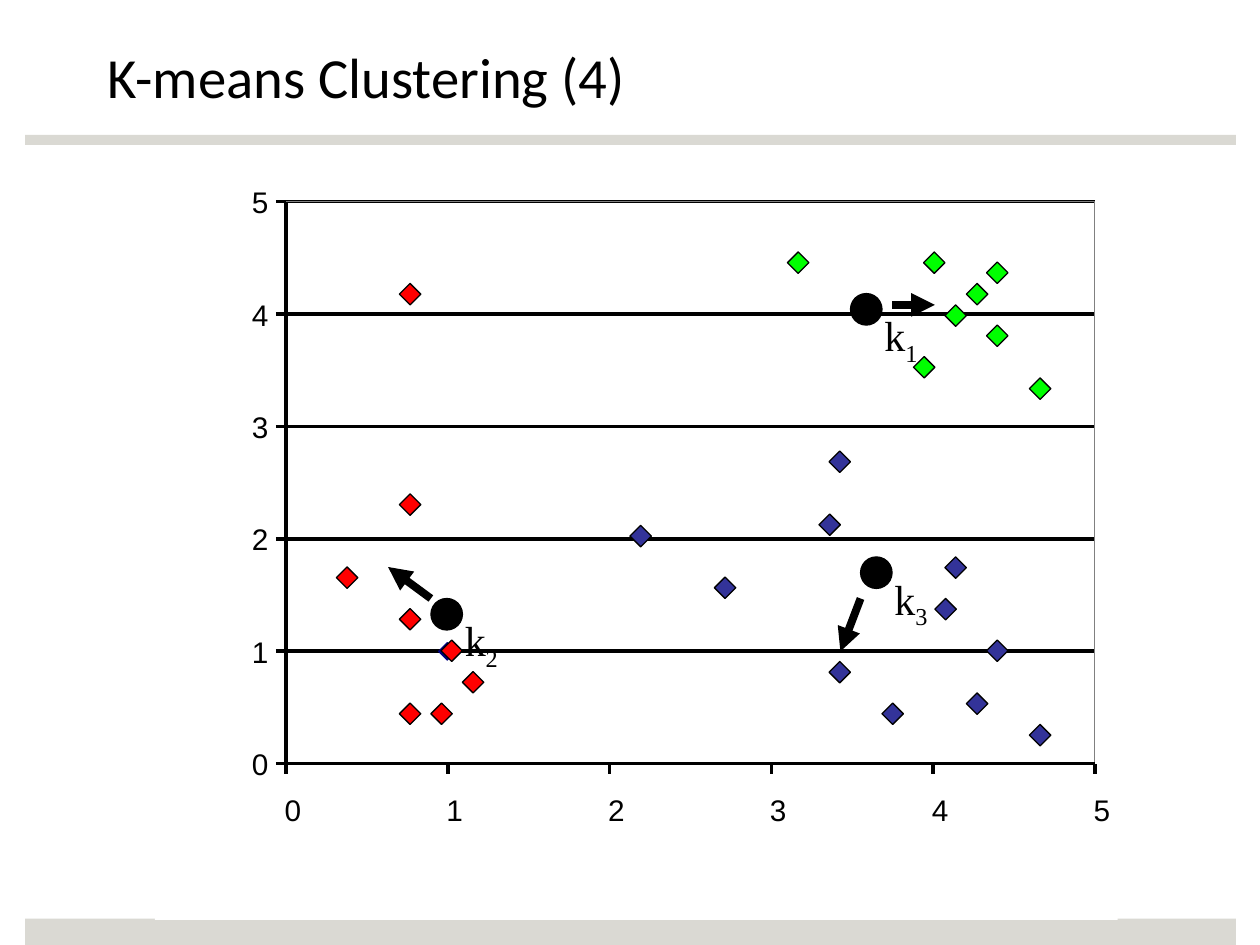
from dataclasses import dataclass

from lxml import etree
from pptx import Presentation, util as u
from pptx.dml.color import RGBColor
from pptx.enum import shapes as s, text as t
from pptx.oxml.ns import qn


@dataclass(frozen=True)
class Theme:
    black: str = "000000"
    white: str = "FFFFFF"
    bar: str = "DAD9D3"
    frame: str = "808080"
    navy: str = "000080"
    red: str = "FF0000"
    green: str = "00FF00"
    blue: str = "333399"
    title: float = 32.4
    tick: int = 17
    mark: int = 24


THEME = Theme()

# Plot area: axes run from 0 to 5
LEFT, TOP, WIDTH, HEIGHT = 2.27, 1.6, 6.42, 4.46
BASE, RIGHT, COUNT = TOP + HEIGHT, LEFT + WIDTH, 5
TICK = 0.08
POINT, DOT = 0.17, 0.25

# Upper left corners of the data points, by cluster
POINTS = {
    THEME.red: [(3.5, 5.08), (3.67, 5.33), (3.42, 5.58), (3.17, 4.83),
                (3.17, 2.25), (3.17, 3.92), (3.17, 5.58), (2.67, 4.5)],
    THEME.green: [(7.33, 2), (7.83, 2.08), (7.67, 2.25), (7.5, 2.42),
                  (7.83, 2.58), (8.17, 3), (6.25, 2), (7.25, 2.83)],
    THEME.blue: [(5, 4.17), (6.58, 3.58), (6.58, 5.25), (7, 5.58),
                 (7.42, 4.75), (6.5, 4.08), (5.67, 4.58), (7.83, 5.08),
                 (7.67, 5.5), (7.5, 4.42), (8.17, 5.75)],
}
# Centroids, and the moves they make
MEANS = {"1": (6.75, 2.33), "2": (3.42, 4.75), "3": (6.83, 4.42)}
MOVES = [(3.42, 4.75, 3.08, 4.5), (6.83, 4.75, 6.67, 5.17),
         (7.08, 2.42, 7.42, 2.42)]


def inches(*sizes):
    return [u.Inches(size) for size in sizes]


def add_form(parent, kind, box, fill=None, line=None, width=0.75):
    """Add a preset shape with an optional fill and outline."""
    form = parent.add_shape(kind, *inches(*box))
    form.shadow.inherit = False
    if fill:
        form.fill.solid()
        form.fill.fore_color.rgb = RGBColor.from_string(fill)
    else:
        form.fill.background()
    if line:
        form.line.color.rgb = RGBColor.from_string(line)
        form.line.width = u.Pt(width)
    else:
        form.line.fill.background()
    return form


def add_line(parent, ends, width=0, arrow=False):
    """Add a straight line, with an arrowhead at its end if asked."""
    line = parent.add_connector(s.MSO_CONNECTOR.STRAIGHT, *inches(*ends))
    line.line.color.rgb = RGBColor.from_string(THEME.black)
    line.line.width = u.Pt(width)
    props = line._element.spPr
    if arrow:
        etree.SubElement(props.find(qn("a:ln")), qn("a:tailEnd"), type="triangle")
    etree.SubElement(props, qn("a:effectLst"))


def style(run, size, face):
    run.font.size = u.Pt(size)
    run.font.name = face
    run.font.color.rgb = RGBColor.from_string(THEME.black)


def add_tick(parent, left, top, value):
    """Add one number beside an axis."""
    frame = parent.add_textbox(*inches(left, top, 0.23, 0.31)).text_frame
    frame.margin_left = frame.margin_right = 0
    frame.margin_top = frame.margin_bottom = 0
    frame.word_wrap = False
    frame.text = str(value)
    para = frame.paragraphs[0]
    para.alignment = t.PP_ALIGN.CENTER
    style(para.runs[0], THEME.tick, "Arial")


def add_mean(parent, index, left, top):
    """Add a centroid grouped with its label."""
    group = parent.add_group_shape().shapes
    add_form(group, s.MSO_SHAPE.OVAL, (left, top, DOT, DOT),
             THEME.black, THEME.black)
    box = group.add_textbox(*inches(left + 0.17, top + 0.08, 0.58, 0.5))
    box.text_frame.word_wrap = True
    para = box.text_frame.paragraphs[0]
    for word in ("k", index):
        run = para.add_run()
        run.text = word
        style(run, THEME.mark, "Times New Roman")
    run.font._element.set("baseline", "-25000")


def add_title(slide, words):
    title = slide.shapes.title
    title.left, title.top, title.width, title.height = inches(0.75, 0.25, 8.5, 0.58)
    frame = title.text_frame
    frame.text = words
    frame.margin_top = u.Inches(0.08)
    frame.vertical_anchor = t.MSO_ANCHOR.TOP
    para = frame.paragraphs[0]
    para.alignment = t.PP_ALIGN.LEFT
    style(para.runs[0], THEME.title, "Calibri")


def add_plot(parent):
    """Draw the plot area, its grid, axes and numbers."""
    rect = s.MSO_SHAPE.RECTANGLE
    area = (LEFT, TOP, WIDTH, HEIGHT)
    add_form(parent, rect, (1.23, 1.31, 7.64, 5.99), THEME.white)
    add_form(parent, rect, area, THEME.white)
    rows = [BASE - i * HEIGHT / COUNT for i in range(COUNT + 1)]
    cols = [LEFT + i * WIDTH / COUNT for i in range(COUNT + 1)]
    for y in rows[1:]:
        add_line(parent, (LEFT, y, RIGHT, y))
    add_form(parent, rect, area, None, THEME.frame, 0.63)
    add_line(parent, (LEFT, TOP, LEFT, BASE))
    add_line(parent, (LEFT, BASE, RIGHT, BASE))
    for value, (x, y) in enumerate(zip(cols, rows)):
        add_line(parent, (LEFT - TICK, y, LEFT, y))
        add_line(parent, (x, BASE + TICK, x, BASE))
        add_tick(parent, 1.95, y - 0.14, value)
        add_tick(parent, x - 0.06, 6.28, value)


def main():
    deck = Presentation()
    deck.slide_width, deck.slide_height = inches(10, 7.5)
    slide = deck.slides.add_slide(deck.slide_layouts[5])
    parent = slide.shapes

    # Title and page bars
    add_title(slide, "K-means Clustering (4)")
    for top, height in ((1.07, 0.08), (7.29, 0.21)):
        add_form(parent, s.MSO_SHAPE.RECTANGLE, (0.2, top, 9.61, height), THEME.bar)

    # Plot, with the one point left unassigned
    add_plot(parent)
    add_form(parent, s.MSO_SHAPE.DIAMOND, (3.48, 5.1, 0.14, 0.14),
             THEME.navy, THEME.navy, 0.63)

    # Centroids, clusters and moves
    for index, (left, top) in MEANS.items():
        add_mean(parent, index, left, top)
    for fill, spots in POINTS.items():
        for left, top in spots:
            add_form(parent, s.MSO_SHAPE.DIAMOND, (left, top, POINT, POINT),
                     fill, THEME.black)
    moves = parent.add_group_shape().shapes
    for ends in MOVES:
        add_line(moves, ends, 4.5, arrow=True)

    deck.save("out.pptx")


if __name__ == "__main__":
    main()
